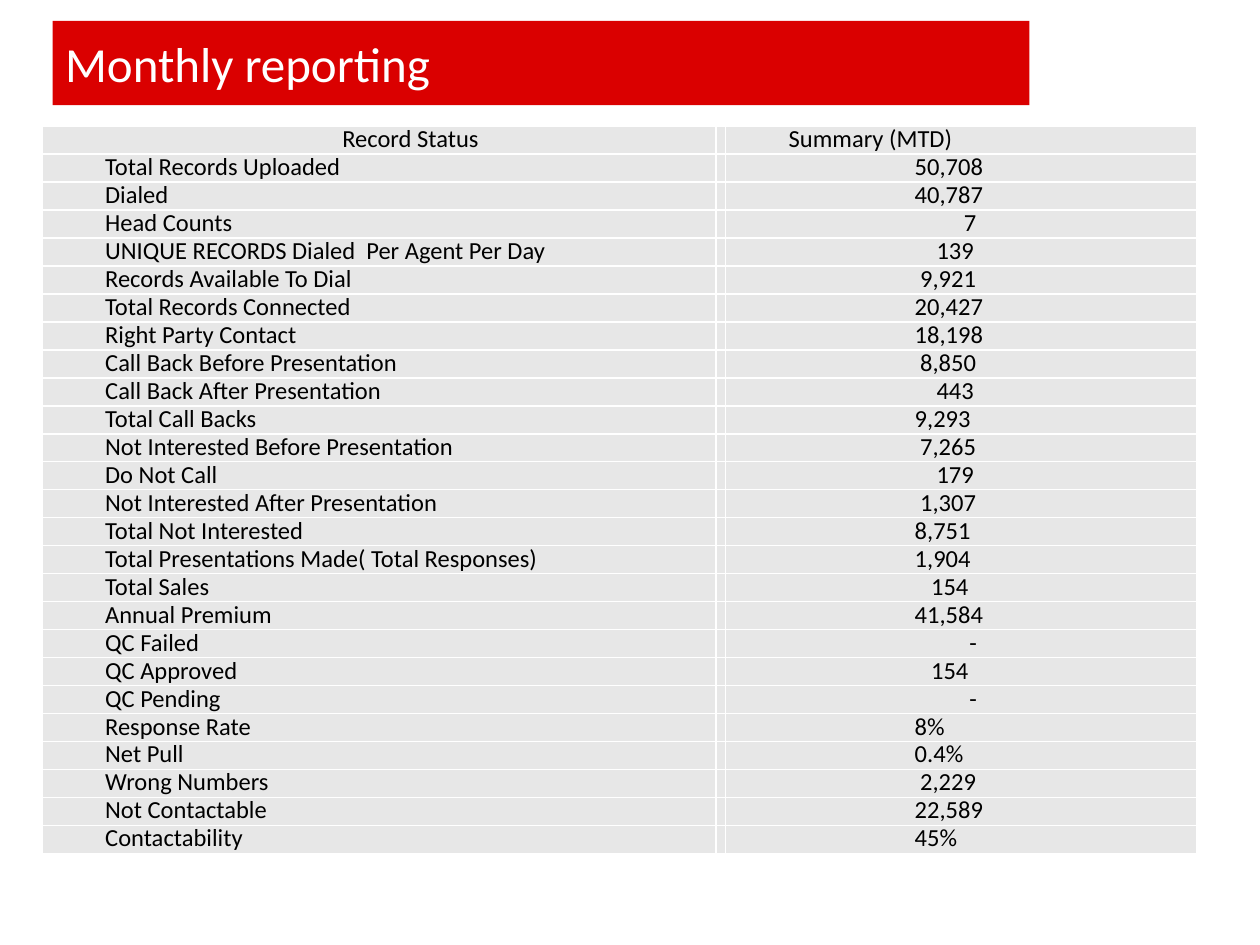
from lxml import etree
from pptx import Presentation
from pptx.dml.color import RGBColor
from pptx.enum.text import MSO_ANCHOR, PP_ALIGN
from pptx.oxml.ns import qn
from pptx.util import Cm, Pt

LEFT, CENTER = PP_ALIGN.LEFT, PP_ALIGN.CENTER
MIDDLE, BOTTOM = MSO_ANCHOR.MIDDLE, MSO_ANCHOR.BOTTOM
FONT = "Calibri"
COLORS = {"red": "DA0000", "white": "FFFFFF", "black": "000000", "grey": "E7E7E7"}
COL_WIDTHS = (13.58, 0.2, 9.5)
TABLE_HEIGHT = 14.67
LABEL_INDENT, VALUE_INDENT = 1.27, 3.81
SPACE = 0.11

ROWS = [
    ("Total Records Uploaded", "50,708", 0),
    ("Dialed", "40,787", 0),
    ("Head Counts", "7", 9),
    ("UNIQUE RECORDS Dialed  Per Agent Per Day", "139", 4),
    ("Records Available To Dial", "9,921", 1),
    ("Total Records Connected", "20,427", 0),
    ("Right Party Contact", "18,198", 0),
    ("Call Back Before Presentation", "8,850", 1),
    ("Call Back After Presentation", "443", 4),
    ("Total Call Backs", "9,293", 0),
    ("Not Interested Before Presentation", "7,265", 1),
    ("Do Not Call", "179", 4),
    ("Not Interested After Presentation", "1,307", 1),
    ("Total Not Interested", "8,751", 0),
    ("Total Presentations Made( Total Responses)", "1,904", 0),
    ("Total Sales", "154", 3),
    ("Annual Premium", "41,584", 0),
    ("QC Failed", "-", 10),
    ("QC Approved", "154", 3),
    ("QC Pending", "-", 10),
    ("Response Rate", "8%", 0),
    ("Net Pull", "0.4%", 0),
    ("Wrong Numbers", "2,229", 1),
    ("Not Contactable", "22,589", 0),
    ("Contactability", "45%", 0),
]


def rgb(name):
    """Return the named colour."""
    return RGBColor.from_string(COLORS[name])


def write(tf, text, size=14, color="black", align=LEFT, level=0, indent=0, spacing=None):
    """Write one formatted paragraph into a text frame."""
    p = tf.paragraphs[0]
    p.alignment, p.level, p.line_spacing = align, level, spacing
    pPr = p._p.get_or_add_pPr()
    pPr.set("marL", str(Cm(indent)))
    pPr.set("indent", "0")
    p.font.size = Pt(size)
    if text:
        r = p.add_run()
        r.text = text
        r.font.name, r.font.size = FONT, Pt(size)
        r.font.color.rgb = rgb(color)
    else:
        etree.SubElement(p._p, qn("a:endParaRPr"), sz=str(size * 100))


def add_title(s, text):
    """Place the title on its red band."""
    sp = s.shapes.title
    sp.left, sp.top, sp.width, sp.height = Cm(1.06), Cm(0.42), Cm(19.69), Cm(1.7)
    sp.fill.solid()
    sp.fill.fore_color.rgb = rgb("red")
    sp.text_frame.vertical_anchor = MIDDLE
    write(sp.text_frame, text, size=28, color="white")


def set_borders(cell, color="white", width=1):
    """Draw the same line on all four sides of a cell."""
    tcPr = cell._tc.get_or_add_tcPr()
    for side in ("lnL", "lnR", "lnT", "lnB"):
        ln = etree.SubElement(tcPr, qn(f"a:{side}"), w=str(Pt(width)))
        fill = etree.SubElement(ln, qn("a:solidFill"))
        etree.SubElement(fill, qn("a:srgbClr"), val=COLORS[color])


def fill_cell(cell, text, **fmt):
    """Format a grey table cell and write its text."""
    set_borders(cell)
    cell.fill.solid()
    cell.fill.fore_color.rgb = rgb("grey")
    cell.margin_left = cell.margin_right = cell.margin_top = cell.margin_bottom = 0
    cell.vertical_anchor = BOTTOM
    write(cell.text_frame, text, spacing=Pt(8), **fmt)


def add_report(s):
    """Add the table of record statuses and monthly totals."""
    count = len(ROWS) + 1
    table = s.shapes.add_table(count, len(COL_WIDTHS), Cm(0.85), Cm(2.54),
                               Cm(sum(COL_WIDTHS)), Cm(TABLE_HEIGHT)).table
    table.first_row = table.horz_banding = False
    for col, width in zip(table.columns, COL_WIDTHS):
        col.width = Cm(width)
    for row in table.rows:
        row.height = Cm(TABLE_HEIGHT / count)
        fill_cell(row.cells[1], "", size=8)
    label = {"level": 1, "indent": LABEL_INDENT}
    fill_cell(table.cell(0, 0), "Record Status", align=CENTER, **label)
    fill_cell(table.cell(0, 2), "Summary (MTD)", **label)
    for i, (status, value, shift) in enumerate(ROWS, 1):
        fill_cell(table.cell(i, 0), status, **label)
        fill_cell(table.cell(i, 2), value, level=3, indent=VALUE_INDENT + shift * SPACE)


def main():
    """Build the slide and save it."""
    prs = Presentation()
    prs.slide_width, prs.slide_height = Cm(25.4), Cm(19.05)
    s = prs.slides.add_slide(prs.slide_layouts[5])
    add_title(s, "Monthly reporting")
    add_report(s)
    prs.save("out.pptx")


if __name__ == "__main__":
    main()
